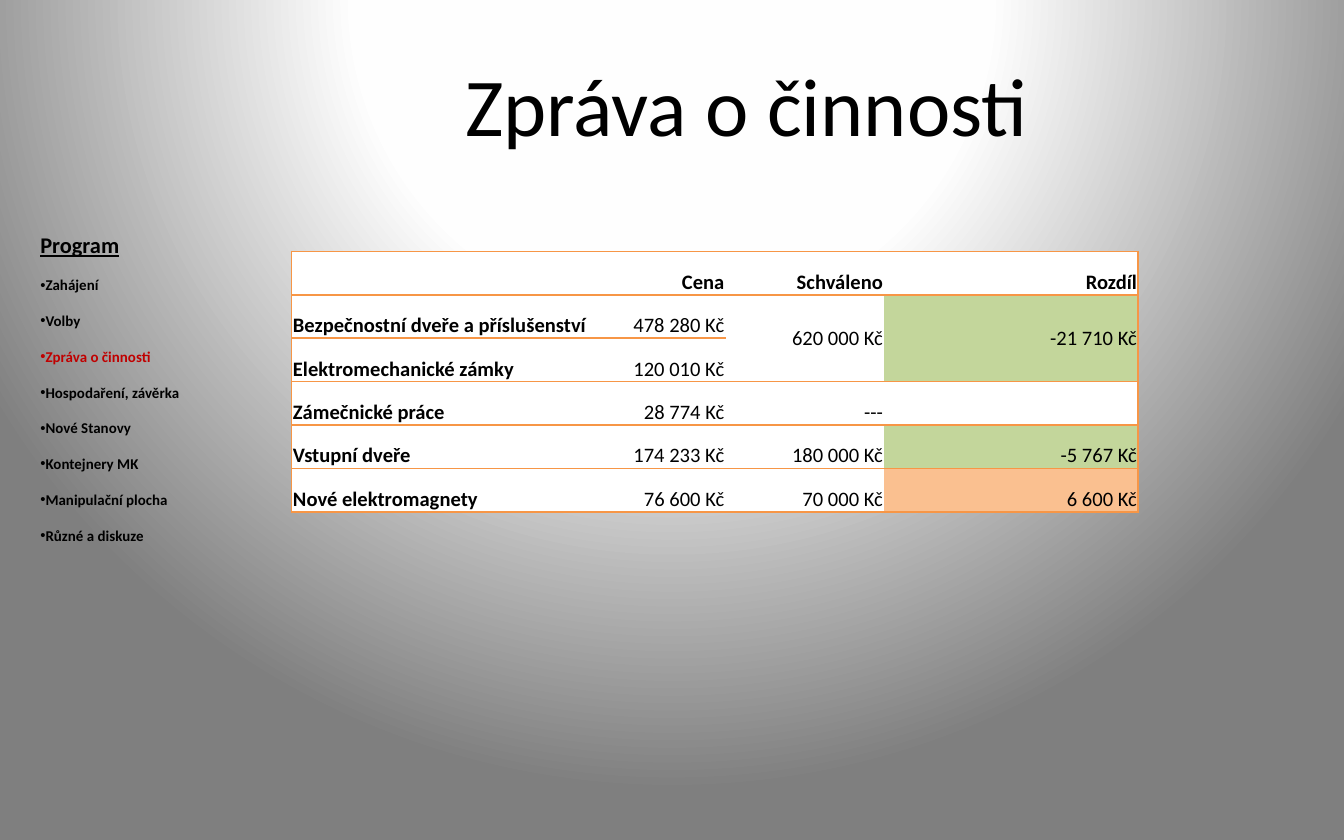
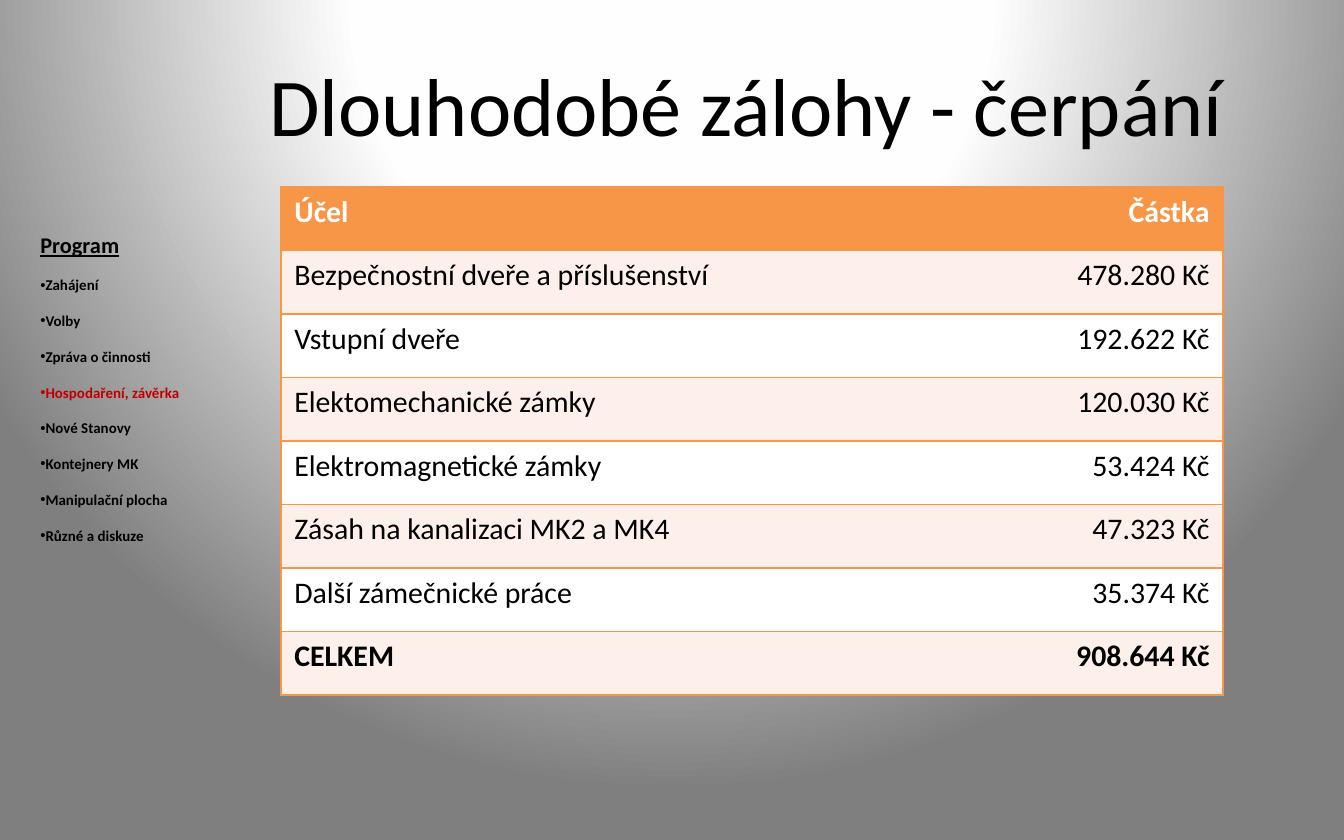
import pptx
import pptx.util
import pptx.dml.color
import pptx.enum.text
import pptx.oxml
import pptx.oxml.ns

# Shared look
COLORS = {
    "text": "000000",
    "current": "C00000",
    "line": "F79646",
    "white": "FFFFFF",
    "band": "FDEFE9",
    "saving": "C3D69B",
    "overrun": "FAC090",
}
BACKGROUND_STOPS = {0: "FFFFFF", 40: "FEFEFE", 100: "7F7F7F"}
FONT = "Calibri"
PLAIN_TABLE_STYLE = "{2D5ABB26-0587-4C30-8999-92F81FD0307C}"
ALIGN = pptx.enum.text.PP_ALIGN
ANCHOR = pptx.enum.text.MSO_ANCHOR

# Grid of 100 columns by 62.5 rows: left, top, width, height
COLUMN_COUNT, ROW_COUNT = 100, 62.5
GRID_UNIT = pptx.util.Inches(0.1)
TITLE_AREA = (16.1, 2.5, 78.9, 10.4)
PROGRAM_AREA = (2, 14.7, 12.6, 26.6)
COSTS_AREA = (21.7, 18.7, 63, 19.4)
DRAWDOWN_AREA = (20.9, 13.9, 70.1, 37.8)

PROGRAM = [
    "Zahájení",
    "Volby",
    "Zpráva o činnosti",
    "Hospodaření, závěrka",
    "Nové Stanovy",
    "Kontejnery MK",
    "Manipulační plocha",
    "Různé a diskuze",
]
COSTS = [
    ["", "Cena", "Schváleno", "Rozdíl"],
    ["Bezpečnostní dveře a příslušenství", "478 280 Kč", "620 000 Kč", "-21 710 Kč"],
    ["Elektromechanické zámky", "120 010 Kč", "", ""],
    ["Zámečnické práce", "28 774 Kč", "---", ""],
    ["Vstupní dveře", "174 233 Kč", "180 000 Kč", "-5 767 Kč"],
    ["Nové elektromagnety", "76 600 Kč", "70 000 Kč", "6 600 Kč"],
]
DRAWDOWN = [
    ["Účel", "Částka"],
    ["Bezpečnostní dveře a příslušenství", "478.280 Kč"],
    ["Vstupní dveře", "192.622 Kč"],
    ["Elektomechanické zámky", "120.030 Kč"],
    ["Elektromagnetické zámky", "53.424 Kč"],
    ["Zásah na kanalizaci MK2 a MK4", "47.323 Kč"],
    ["Další zámečnické práce", "35.374 Kč"],
    ["CELKEM", "908.644 Kč"],
]


def grid(count):
    return pptx.util.Emu(round(count * GRID_UNIT))


def set_attributes(target, values):
    for name, value in values.items():
        setattr(target, name, value)


def add_element(parent, xml):
    """Append a drawing element written as a:tag markup."""
    namespace = pptx.oxml.ns.nsdecls("a")
    tag, rest = xml[:4], xml[4:]
    end = next(i for i, letter in enumerate(rest) if letter in " />")
    parent.append(pptx.oxml.parse_xml(f"{tag}{rest[:end]} {namespace}{rest[end:]}"))


def place(shape, area):
    set_attributes(shape, dict(zip(("left", "top", "width", "height"), map(grid, area))))


def write(paragraph, text, size, color="text", **font_values):
    run = paragraph.add_run()
    run.text = text
    set_attributes(run.font, {"name": FONT, "size": pptx.util.Pt(size), **font_values})
    run.font.color.rgb = pptx.dml.color.RGBColor.from_string(COLORS[color])


def set_background(master):
    master.background.fill.solid()
    properties = master.element.find(".//" + pptx.oxml.ns.qn("p:bgPr"))
    properties.remove(properties[0])
    stops = "".join(
        f'<a:gs pos="{position * 1000}"><a:srgbClr val="{color}"/></a:gs>'
        for position, color in BACKGROUND_STOPS.items()
    )
    add_element(
        properties,
        f'<a:gradFill rotWithShape="1"><a:gsLst>{stops}</a:gsLst><a:path path="circle">'
        '<a:fillToRect l="50000" t="-80000" r="50000" b="180000"/></a:path></a:gradFill>',
    )
    properties.insert(0, properties[-1])


def add_title(slide, text):
    title = slide.shapes.title
    place(title, TITLE_AREA)
    title.text_frame.vertical_anchor = ANCHOR.MIDDLE
    paragraph = title.text_frame.paragraphs[0]
    paragraph.alignment = ALIGN.CENTER
    write(paragraph, text, 44)


def add_program(slide, current):
    """List the agenda with the current item highlighted."""
    body = slide.placeholders[1]
    place(body, PROGRAM_AREA)
    frame = body.text_frame
    set_attributes(frame, {
        "word_wrap": True,
        "vertical_anchor": ANCHOR.TOP,
        "auto_size": pptx.enum.text.MSO_AUTO_SIZE.SHAPE_TO_FIT_TEXT,
    })
    for index, text in enumerate(["Program"] + PROGRAM):
        paragraph = frame.add_paragraph() if index else frame.paragraphs[0]
        properties = paragraph._p.get_or_add_pPr()
        for name in ("marL", "indent"):
            properties.set(name, "0")
        if index:
            add_element(properties, '<a:buFont typeface="Arial"/>')
            add_element(properties, '<a:buChar char="•"/>')
        else:
            add_element(properties, "<a:buNone/>")
        set_attributes(paragraph, {
            "line_spacing": 2.0,
            "space_before": pptx.util.Pt(0),
            "alignment": ALIGN.LEFT,
        })
        color = "current" if text == current else "text"
        write(paragraph, text, 8 if index else 12, color, bold=True, underline=not index)


def add_borders(cell, sides):
    properties = cell._tc.get_or_add_tcPr()
    for side in sides:
        add_element(
            properties,
            f'<a:ln{side} w="12700"><a:solidFill><a:srgbClr val="{COLORS["line"]}"/>'
            f"</a:solidFill></a:ln{side}>",
        )


def add_table(slide, area, rows, column_widths, size, style_cell):
    """Draw a table; style_cell(row, column) gives fill, font and cell values."""
    frame = slide.shapes.add_table(len(rows), len(column_widths), *map(grid, area))
    table = frame.table
    frame._element.find(".//" + pptx.oxml.ns.qn("a:tableStyleId")).text = PLAIN_TABLE_STYLE
    for column, width in zip(table.columns, column_widths):
        column.width = grid(width)
    last = len(column_widths) - 1
    for row, texts in enumerate(rows):
        table.rows[row].height = grid(area[3] / len(rows))
        for column, text in enumerate(texts):
            cell = table.cell(row, column)
            fill, font_values, cell_values = style_cell(row, column)
            sides = ["L"] * (column == 0) + ["R"] * (column == last) + ["T", "B"]
            add_borders(cell, sides)
            cell.fill.solid()
            cell.fill.fore_color.rgb = pptx.dml.color.RGBColor.from_string(COLORS[fill])
            set_attributes(cell, cell_values)
            paragraph = cell.text_frame.paragraphs[0]
            paragraph.alignment = ALIGN.RIGHT if column else ALIGN.LEFT
            write(paragraph, text, size, **font_values)
    return table


def style_costs(row, column):
    difference_fills = {1: "saving", 2: "saving", 4: "saving", 5: "overrun"}
    fill = difference_fills.get(row, "white") if column == 3 else "white"
    merged = row == 1 and column > 1
    margins = dict.fromkeys(("margin_left", "margin_right", "margin_top"), grid(0.1))
    cell_values = {
        **margins,
        "margin_bottom": 0,
        "vertical_anchor": ANCHOR.MIDDLE if merged else ANCHOR.BOTTOM,
    }
    return fill, {"bold": row == 0 or column == 0}, cell_values


def style_drawdown(row, column):
    if row == 0:
        return "line", {"color": "white", "bold": True}, {}
    fill = "band" if row % 2 else "white"
    return fill, {"bold": row == len(DRAWDOWN) - 1}, {}


def add_slide(presentation, title, current):
    slide = presentation.slides.add_slide(presentation.slide_layouts[1])
    add_title(slide, title)
    add_program(slide, current)
    return slide


def main():
    presentation = pptx.Presentation()
    presentation.slide_width = grid(COLUMN_COUNT)
    presentation.slide_height = grid(ROW_COUNT)
    set_background(presentation.slide_master)

    # Activity report: prices against approved amounts
    slide = add_slide(presentation, "Zpráva o činnosti", PROGRAM[2])
    table = add_table(slide, COSTS_AREA, COSTS, (23.6, 8.7, 11.8, 18.9), 11, style_costs)
    for column in (2, 3):
        table.cell(1, column).merge(table.cell(2, column))

    # Drawdown of long-term advances
    slide = add_slide(presentation, "Dlouhodobé zálohy - čerpání", PROGRAM[3])
    add_table(slide, DRAWDOWN_AREA, DRAWDOWN, (43.1, 27), 16, style_drawdown)

    presentation.save("out.pptx")


if __name__ == "__main__":
    main()
